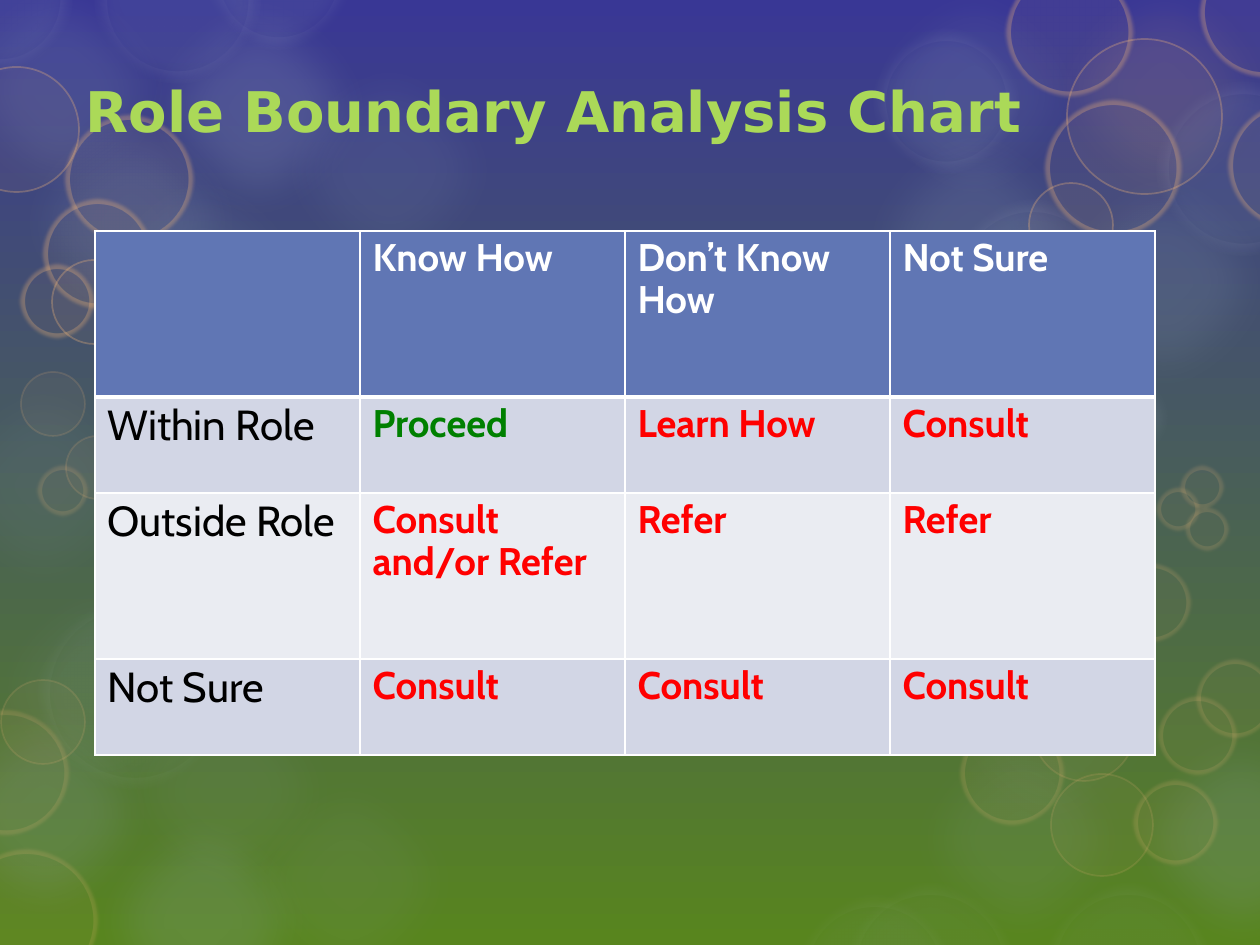
from lxml.etree import SubElement
from pptx import Presentation
from pptx.dml.color import RGBColor
from pptx.enum.shapes import MSO_SHAPE
from pptx.enum.text import MSO_ANCHOR, PP_ALIGN
from pptx.oxml.ns import qn
from pptx.util import Pt

WIDE, HIGH = 1260, 945
BLUE, PALE, GOLD = "9BADC4", "EFF2F5", "F0B57A"
SANS, CABIN = "DejaVu Sans", "Cabin"

# Blurred discs of one size: left, top, opacity, colour
GLOW = 263
GLOWS = [
    (-32, 557, 8, BLUE), (72, 151, 10, BLUE), (258, 39, 10, BLUE),
    (72, 790, 16, BLUE), (-70, -41, 14, BLUE), (127, -23, 20, BLUE),
    (0, 91, 15, BLUE), (1033, -41, 10, GOLD), (843, -37, 10, BLUE),
    (1033, 151, 15, BLUE), (1110, 708, 16, BLUE), (919, 601, 5, BLUE),
    (-86, 682, 16, BLUE), (97, 660, 8, BLUE), (843, 108, 15, BLUE),
    (890, 708, 10, BLUE), (218, 751, 8, BLUE), (-88, 355, 8, BLUE),
]

# Pale hazes by (fill, line) opacity: left, top, size
HAZES = {
    (10, 6): [(1157, 82, 173), (874, 29, 144), (948, 200, 168), (994, 282, 144),
              (1067, 367, 100), (95, -82, 165), (207, -94, 143), (-72, -73, 144)],
    (6, 4): [(38, 596, 193), (795, 895, 159), (844, 883, 172), (1044, 883, 168)],
}

# Gold rings by (line width, line opacity): left, top, size
RINGS = {
    (5, 15): [(-44, 850, 141), (-55, 711, 123), (961, 722, 102), (1134, 781, 83),
              (1113, 564, 77), (1159, 697, 77), (1197, 660, 77), (1181, 466, 42),
              (1157, 488, 42), (1186, 508, 42), (38, 466, 49)],
    (5, 30): [(66, 116, 126), (44, 200, 107), (21, 265, 72), (1007, -30, 125),
              (1201, -50, 126), (1229, 103, 125), (1046, 101, 134)],
    (1, 15): [(1, 680, 84), (1051, 774, 102), (1033, 679, 102),
              (21, 372, 64), (66, 436, 63)],
    (1, 30): [(-46, 67, 125), (52, 260, 84), (1067, 39, 155), (1029, 183, 84)],
}

TITLE = "Role Boundary Analysis Chart"
ROWS = [
    ["", "Know How", "Don’t Know How", "Not Sure"],
    ["Within Role", "Proceed", "Learn How", "Consult"],
    ["Outside Role", "Consult and/or Refer", "Refer", "Refer"],
    ["Not Sure", "Consult", "Consult", "Consult"],
]
TALL = [166, 96, 166, 96]
FILLS = ["6076B4", "D2D6E5", "EAECF2", "D2D6E5"]
COL = 265


def px(n):
    return round(n * 914400 / 126)


def rgb(code):
    return RGBColor.from_string(code)


def fade(props, alpha):
    """Set the opacity, in percent, of a solid fill below props."""
    color = props.find(qn("a:solidFill"))[0]
    SubElement(color, qn("a:alpha"), val=str(alpha * 1000))


def disc(shapes, spot, fill, alpha, line=None, soft=0):
    """Draw a circle; line is (colour, width, opacity), soft the blur in points."""
    left, top, size = map(px, spot)
    shape = shapes.add_shape(MSO_SHAPE.OVAL, left, top, size, size)
    shape.shadow.inherit = False
    props = shape._element.spPr
    shape.fill.solid()
    shape.fill.fore_color.rgb = rgb(fill)
    fade(props, alpha)
    if line:
        color, width, clear = line
        shape.line.color.rgb = rgb(color)
        shape.line.width = Pt(width)
        fade(props.find(qn("a:ln")), clear)
    else:
        shape.line.fill.background()
    if soft:
        SubElement(props.find(qn("a:effectLst")), qn("a:softEdge"), rad=str(Pt(soft)))


def write(frame, text, font, size, color, bold):
    para = frame.paragraphs[0]
    para.text = text
    para.alignment = PP_ALIGN.LEFT
    para.font.name, para.font.size, para.font.bold = font, Pt(size), bold
    para.font.color.rgb = rgb(color)
    return para


def border(cell, base):
    """Give a cell white sides, with the bottom one base points wide."""
    props = cell._tc.get_or_add_tcPr()
    for side, width in (("L", 1), ("R", 1), ("T", 1), ("B", base)):
        line = SubElement(props, qn("a:ln" + side), w=str(Pt(width)))
        SubElement(SubElement(line, qn("a:solidFill")), qn("a:srgbClr"), val="FFFFFF")


def style(row, col, text):
    """Return size, colour and boldness for the text of a cell."""
    if row == 0:
        return 22, "FFFFFF", True
    if col == 0:
        return 24, "000000", False
    return 22, "008000" if text == "Proceed" else "FF0000", True


def backdrop(slide):
    fill = slide.background.fill
    fill.gradient()
    fill.gradient_angle = 270
    for stop, color in zip(fill.gradient_stops, ("393795", "58851E")):
        stop.color.rgb = rgb(color)
    shapes = slide.shapes
    for left, top, alpha, color in GLOWS:
        disc(shapes, (left, top, GLOW), color, alpha, soft=25)
    for (alpha, clear), spots in HAZES.items():
        for spot in spots:
            disc(shapes, spot, BLUE, alpha, (PALE, 14, clear), soft=10)
    for (width, clear), spots in RINGS.items():
        for spot in spots:
            disc(shapes, spot, GOLD, 5, (GOLD, width, clear), soft=2 if width > 1 else 0)


def heading(slide):
    frame = slide.shapes.add_textbox(px(73), px(31), px(1113), px(158)).text_frame
    frame.word_wrap = True
    frame.vertical_anchor = MSO_ANCHOR.MIDDLE
    write(frame, TITLE, SANS, 32, "ABD958", True)


def chart(slide):
    table = slide.shapes.add_table(len(ROWS), len(ROWS[0]), px(95), px(231),
                                   px(COL * len(ROWS[0])), px(sum(TALL))).table
    for col in table.columns:
        col.width = px(COL)
    for r, words in enumerate(ROWS):
        table.rows[r].height = px(TALL[r])
        for c, text in enumerate(words):
            cell = table.cell(r, c)
            border(cell, 1 if r else 3)
            cell.fill.solid()
            cell.fill.fore_color.rgb = rgb(FILLS[r])
            size, color, bold = style(r, c, text)
            para = write(cell.text_frame, text, CABIN, size, color, bold)
            para.line_spacing = 0.9
            para.space_before = Pt(size * 0.2)


def main():
    deck = Presentation()
    deck.slide_width, deck.slide_height = px(WIDE), px(HIGH)
    slide = deck.slides.add_slide(deck.slide_layouts[6])
    backdrop(slide)
    heading(slide)
    chart(slide)
    deck.save("out.pptx")


if __name__ == "__main__":
    main()
